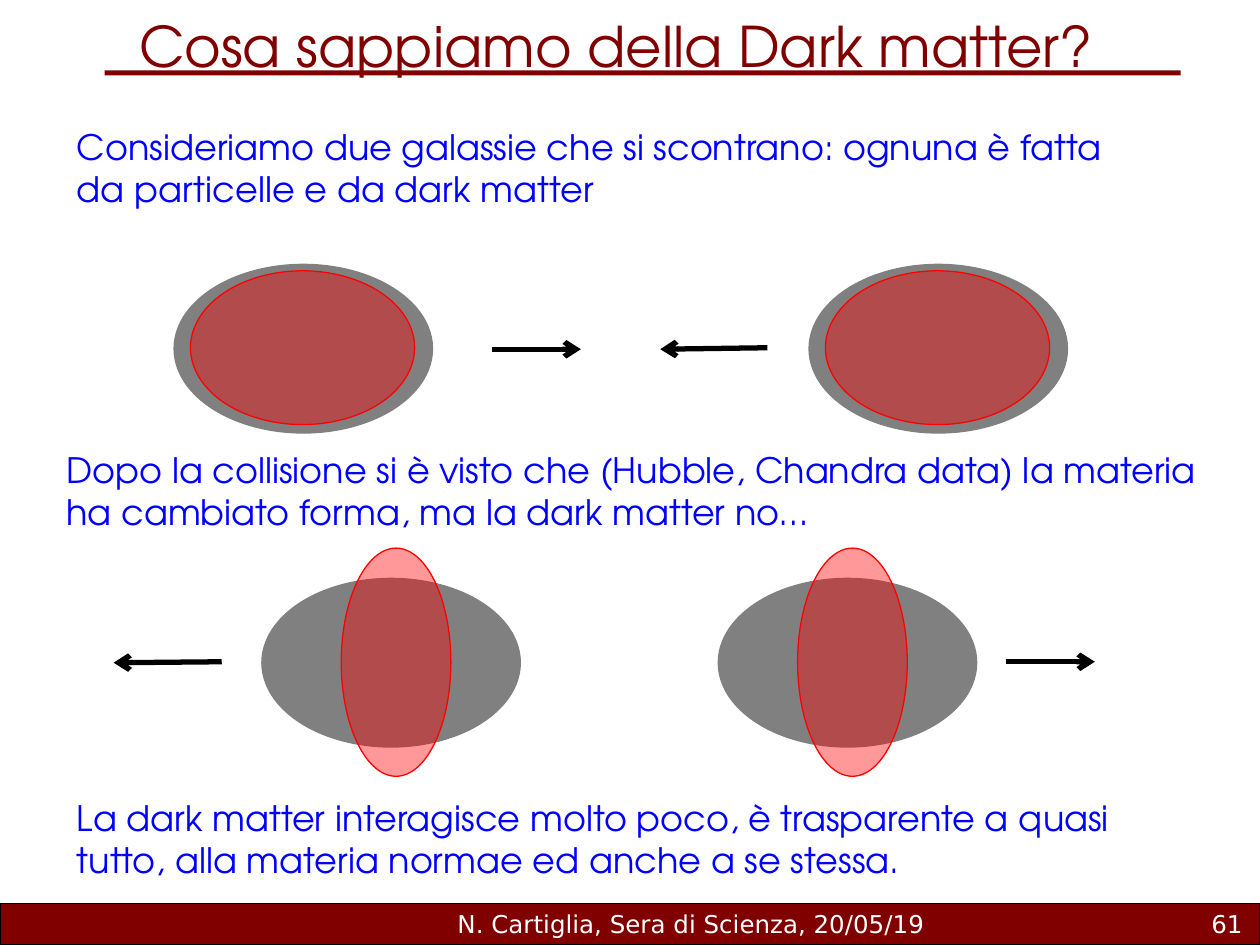
from lxml.etree import SubElement
from pptx import Presentation
from pptx.dml.color import RGBColor
from pptx.enum.shapes import MSO_CONNECTOR, MSO_SHAPE
from pptx.enum.text import MSO_ANCHOR, PP_ALIGN
from pptx.oxml.ns import qn
from pptx.util import Cm, Pt


def paint(color_format, hex_color):
    color_format.rgb = RGBColor.from_string(hex_color)


def write(holder, text, size, face, color, align, anchor):
    frame = holder.text_frame
    frame.word_wrap = True
    frame.vertical_anchor = anchor
    frame.text = text
    paragraph = frame.paragraphs[0]
    paragraph.alignment = align
    for name, value in {"size": Pt(size), "name": face, "bold": False}.items():
        setattr(paragraph.font, name, value)
    paint(paragraph.font.color, color)


MAROON, BLUE, WHITE, GREY, RED = "800000", "0000FF", "FFFFFF", "808080", "FF0000"
ADVENTOR, DEJAVU = "TeX Gyre Adventor", "DejaVu Sans"

deck = Presentation()
deck.slide_width, deck.slide_height = Cm(25.4), Cm(19.05)
slide = deck.slides.add_slide(deck.slide_layouts[5])

bands = [
    (0, 18.21, 25.4, 0.84, "000000"),
    (2.11, 1.42, 21.69, 0.1, None),
]
for left, top, width, height, outline in bands:
    band = slide.shapes.add_shape(
        MSO_SHAPE.RECTANGLE, Cm(left), Cm(top), Cm(width), Cm(height))
    band.shadow.inherit = False
    band.fill.solid()
    paint(band.fill.fore_color, MAROON)
    if outline:
        paint(band.line.color, outline)
        band.line.width = Pt(0.75)
    else:
        band.line.fill.background()

heading = slide.shapes.title
for name, value in {"left": 0.3, "top": 0.1, "width": 24.56, "height": 1.63}.items():
    setattr(heading, name, Cm(value))
write(heading, "Cosa sappiamo della Dark matter? ", 32, ADVENTOR, MAROON,
      PP_ALIGN.CENTER, MSO_ANCHOR.MIDDLE)

footers = [
    ("N. Cartiglia, Sera di Scienza, 20/05/19", 8.71, 10.44, PP_ALIGN.CENTER),
    ("61", 20.02, 5.28, PP_ALIGN.RIGHT),
]
for text, left, width, align in footers:
    footer = slide.shapes.add_textbox(Cm(left), Cm(18.21), Cm(width), Cm(0.84))
    write(footer, text, 14, DEJAVU, WHITE, align, MSO_ANCHOR.MIDDLE)

statements = [
    ("Consideriamo due galassie che si scontrano: ognuna è fatta "
     "da particelle e da dark matter", 1.3, 2.41, 21.82),
    ("Dopo la collisione si è visto che (Hubble, Chandra data) la materia "
     "ha cambiato forma, ma la dark matter no…", 1.09, 8.92, 23.8),
    ("La dark matter interagisce molto poco, è trasparente a quasi "
     "tutto, alla materia normae ed anche a se stessa.", 1.3, 15.93, 21.82),
]
for text, left, top, width in statements:
    statement = slide.shapes.add_textbox(Cm(left), Cm(top), Cm(width), Cm(2.82))
    write(statement, text, 20, ADVENTOR, BLUE, PP_ALIGN.LEFT, MSO_ANCHOR.TOP)

halo = (0, 0, 5.21, 3.4)
matter_before = (0.33, 0.13, 4.52, 3.1)
matter_after = (1.6, -0.61, 2.21, 4.6)
galaxies = [
    (3.51, 5.33, matter_before),
    (16.31, 5.33, matter_before),
    (5.28, 11.66, matter_after),
    (14.48, 11.66, matter_after),
]
for left, top, matter in galaxies:
    galaxy = slide.shapes.add_group_shape()
    for (dx, dy, width, height), color in ((halo, GREY), (matter, RED)):
        ellipse = galaxy.shapes.add_shape(
            MSO_SHAPE.OVAL, Cm(left + dx), Cm(top + dy), Cm(width), Cm(height))
        ellipse.shadow.inherit = False
        ellipse.fill.solid()
        paint(ellipse.fill.fore_color, color)
        paint(ellipse.line.color, color)
        ellipse.line.width = Pt(0.75)
    tint = ellipse.fill._xPr.find(qn("a:solidFill"))[0]
    SubElement(tint, qn("a:alpha"), val="40000")

motions = [
    (9.91, 7.04, 11.71, 7.04),
    (15.47, 7.01, 13.31, 7.04),
    (4.47, 13.34, 2.29, 13.36),
    (20.27, 13.34, 22.07, 13.34),
]
for start_x, start_y, end_x, end_y in motions:
    motion = slide.shapes.add_connector(
        MSO_CONNECTOR.STRAIGHT, Cm(start_x), Cm(start_y), Cm(end_x), Cm(end_y))
    paint(motion.line.color, "000000")
    motion.line.width = Pt(3)
    SubElement(motion.line._get_or_add_ln(), qn("a:tailEnd"), type="arrow")
    SubElement(motion._element.spPr, qn("a:effectLst"))

deck.save("out.pptx")
